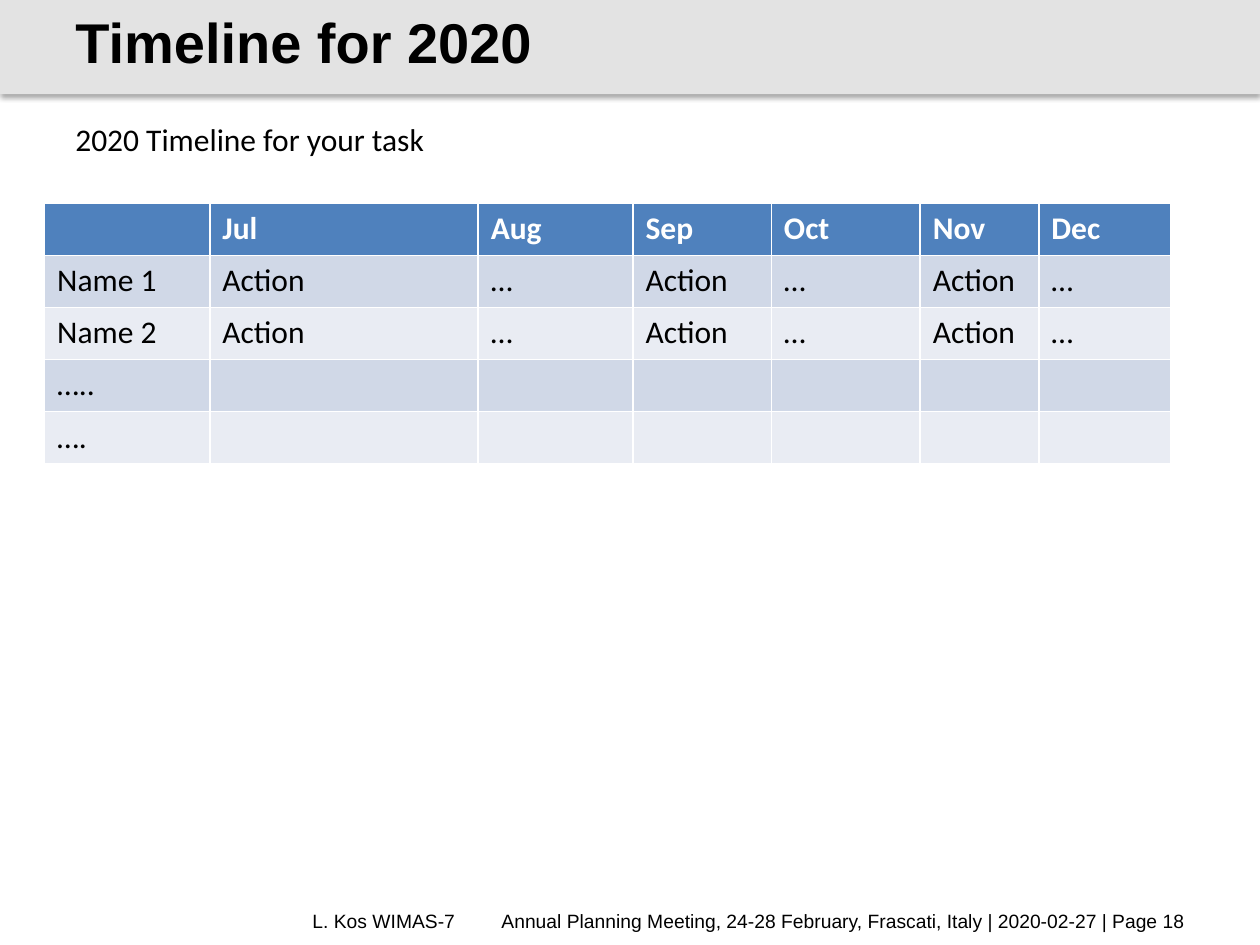
import pptx
import pptx.dml.color
import pptx.enum.shapes
import pptx.enum.text
import pptx.oxml
import pptx.oxml.ns
import pptx.util
from pptx.util import Cm

COLORS = {
    "banner": "E3E3E3",
    "text": "000000",
    "header": "4F81BD",
    "header_text": "FFFFFF",
    "border": "FFFFFF",
    "odd_row": "D0D8E7",
    "even_row": "E9ECF3",
}
COLUMN_WIDTHS = (3.33, 5.41, 3.12, 2.79, 3, 2.39, 2.67)
ROW_HEIGHT = 1.05
ACTIONS = ["Action", "…"] * 3
ROWS = [
    ["", "Jul", "Aug", "Sep", "Oct", "Nov", "Dec"],
    ["Name 1"] + ACTIONS,
    ["Name 2"] + ACTIONS,
    ["….."] + [""] * 6,
    ["…."] + [""] * 6,
]


def rgb(name):
    return pptx.dml.color.RGBColor.from_string(COLORS[name])


def parse_drawing(xml):
    """Turn a DrawingML fragment with the a: prefix into an element."""
    tag_end = min(xml.index(mark) for mark in (" ", ">") if mark in xml)
    namespace = " " + pptx.oxml.ns.nsdecls("a")
    return pptx.oxml.parse_xml(xml[:tag_end] + namespace + xml[tag_end:])


def write_text(frame, text, font="Calibri", size=18, color="text", bold=False, tab=None):
    """Write one paragraph, with an optional left tab stop."""
    paragraph = frame.paragraphs[0]
    paragraph.text = text
    if tab is not None:
        paragraph._p.get_or_add_pPr().append(parse_drawing(
            f'<a:tabLst><a:tab pos="{tab}" algn="l"/></a:tabLst>'))
    paragraph.font.name = font
    paragraph.font.size = pptx.util.Pt(size)
    paragraph.font.bold = bold
    paragraph.font.color.rgb = rgb(color)


def add_text(slide, text, left, top, width, height, middle=False, **text_format):
    box = slide.shapes.add_textbox(Cm(left), Cm(top), Cm(width), Cm(height))
    frame = box.text_frame
    frame.word_wrap = True
    if middle:
        frame.vertical_anchor = pptx.enum.text.MSO_ANCHOR.MIDDLE
    write_text(frame, text, **text_format)


def add_banner(slide, width, height):
    banner = slide.shapes.add_shape(
        pptx.enum.shapes.MSO_SHAPE.RECTANGLE, 0, 0, width, height)
    banner.fill.solid()
    banner.fill.fore_color.rgb = rgb("banner")
    banner.line.fill.background()
    banner.shadow.inherit = False
    effects = banner._element.spPr.find(pptx.oxml.ns.qn("a:effectLst"))
    effects.append(parse_drawing(
        '<a:outerShdw blurRad="40000" dist="23000" dir="5400000" rotWithShape="0">'
        f'<a:srgbClr val="{COLORS["text"]}"><a:alpha val="35000"/></a:srgbClr>'
        '</a:outerShdw>'))


def style_cell(cell, fill):
    properties = cell._tc.get_or_add_tcPr()
    for side in ("lnL", "lnR", "lnT", "lnB"):
        properties.append(parse_drawing(
            f'<a:{side} w="{pptx.util.Pt(0.96)}"><a:solidFill>'
            f'<a:srgbClr val="{COLORS["border"]}"/></a:solidFill></a:{side}>'))
    cell.fill.solid()
    cell.fill.fore_color.rgb = rgb(fill)


def add_timeline_table(slide, left, top):
    table = slide.shapes.add_table(
        len(ROWS), len(COLUMN_WIDTHS), Cm(left), Cm(top),
        Cm(sum(COLUMN_WIDTHS)), Cm(ROW_HEIGHT * len(ROWS))).table
    table.horz_banding = False
    for column, width in zip(table.columns, COLUMN_WIDTHS):
        column.width = Cm(width)
    for row_index, texts in enumerate(ROWS):
        is_header = row_index == 0
        fill = "header" if is_header else ("even_row", "odd_row")[row_index % 2]
        table.rows[row_index].height = Cm(ROW_HEIGHT)
        for column_index, text in enumerate(texts):
            cell = table.cell(row_index, column_index)
            style_cell(cell, fill)
            write_text(cell.text_frame, text, bold=is_header,
                       color="header_text" if is_header else "text")


def main():
    presentation = pptx.Presentation()
    presentation.slide_width = Cm(25.4)
    presentation.slide_height = Cm(19.05)
    slide = presentation.slides.add_slide(presentation.slide_layouts[6])

    add_banner(slide, presentation.slide_width, Cm(1.9))
    add_text(slide, "L. Kos WIMAS-7\tAnnual Planning Meeting, 24-28 February, "
             "Frascati, Italy | 2020-02-27 | Page 18",
             6.05, 18.19, 18.4, 0.74, middle=True, font="Arial", size=11, tab=Cm(3.81))
    add_text(slide, "Timeline for 2020", 1.27, 0.2, 20.96, 1.27,
             middle=True, font="Arial", size=32, bold=True)
    add_text(slide, "2020 Timeline for your task", 1.27, 2.29, 18.8, 1.02)
    add_timeline_table(slide, 0.9, 4.1)

    presentation.save("out.pptx")


if __name__ == "__main__":
    main()
